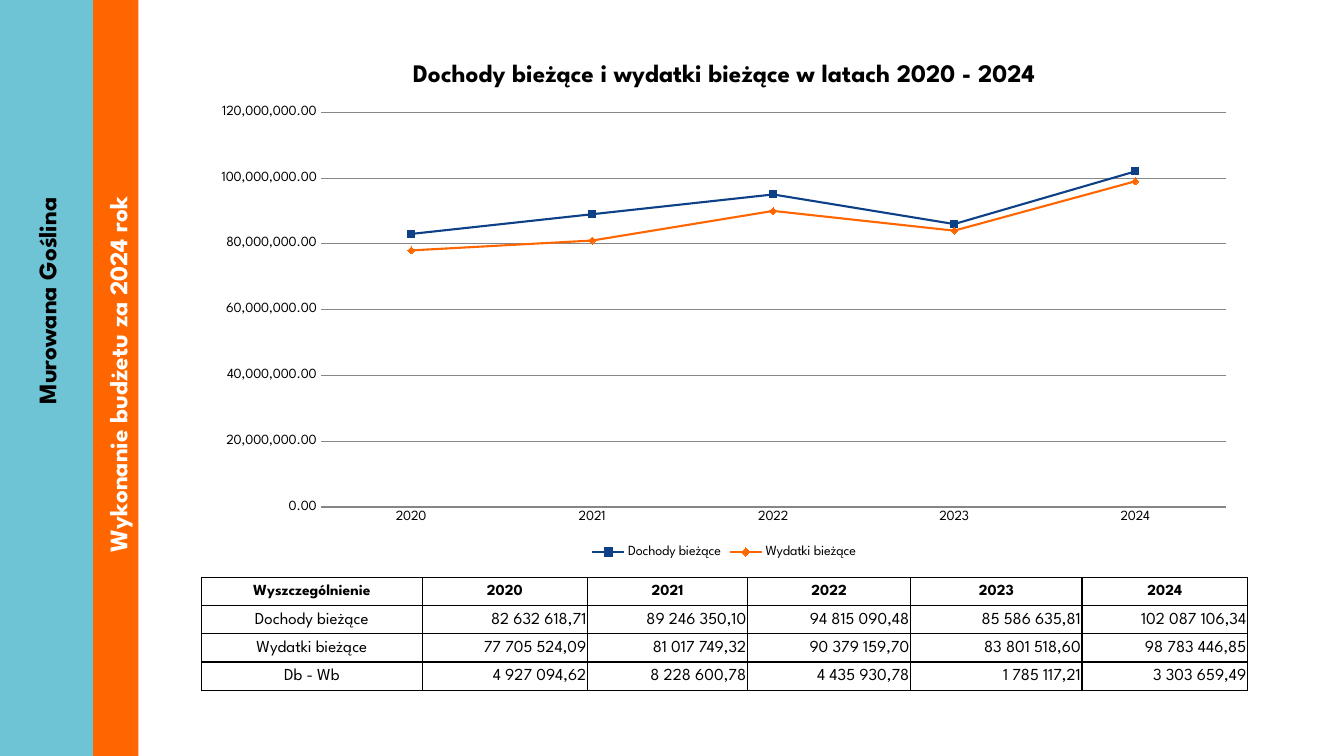
from lxml import etree
from pptx import Presentation
from pptx import util as u
from pptx.chart.data import CategoryChartData
from pptx.dml.color import RGBColor
from pptx.enum import chart as charts, shapes, text
from pptx.oxml import parse_xml
from pptx.oxml.ns import nsdecls, qn

BLACK = RGBColor(0x00, 0x00, 0x00)
WHITE = RGBColor(0xFF, 0xFF, 0xFF)
TEAL = RGBColor(0x6E, 0xC4, 0xD5)
ORANGE = RGBColor(0xFF, 0x66, 0x00)
NAVY = RGBColor(0x0E, 0x40, 0x87)
GREY = RGBColor(0x86, 0x86, 0x86)

YEARS = ["2020", "2021", "2022", "2023", "2024"]
BUDGET = [
    ["Dochody bieżące", "82 632 618,71", "89 246 350,10", "94 815 090,48",
     "85 586 635,81", "102 087 106,34"],
    ["Wydatki bieżące", "77 705 524,09", "81 017 749,32", "90 379 159,70",
     "83 801 518,60", "98 783 446,85"],
    ["Db - Wb", "4 927 094,62", "8 228 600,78", "4 435 930,78",
     "1 785 117,21", "3 303 659,49"],
]


def amount(label):
    """Turn a Polish-formatted amount into a number in whole millions."""
    return round(float(label.replace(" ", "").replace(",", ".")), -6)


class BudgetSlide:
    font_name = "League Spartan"

    def __init__(self, slide):
        self.slide = slide

    def style(self, font, size, color=BLACK, bold=False):
        font.name = self.font_name
        font.size = u.Pt(size)
        font.bold = bold
        font.color.rgb = color

    def band(self, left, width, color):
        shape = self.slide.shapes.add_shape(
            shapes.MSO_SHAPE.RECTANGLE, u.Cm(left), 0, u.Cm(width), u.Cm(19.05))
        shape.shadow.inherit = False
        shape.fill.solid()
        shape.fill.fore_color.rgb = color
        shape.line.fill.background()

    def vertical_text(self, content, center_x, center_y, length, color):
        thickness = 1.02
        shape = self.slide.shapes.add_textbox(
            u.Cm(center_x - length / 2), u.Cm(center_y - thickness / 2),
            u.Cm(length), u.Cm(thickness))
        shape.rotation = 270
        frame = shape.text_frame
        frame.word_wrap = True
        frame.vertical_anchor = text.MSO_ANCHOR.MIDDLE
        frame.text = content
        self.style(frame.paragraphs[0].runs[0].font, 18, color, True)

    def line_chart(self, title, categories, series, box, plot_box):
        data = CategoryChartData(number_format="#,##0.00")
        data.categories = categories
        for name, values, _, _ in series:
            data.add_series(name, values)
        chart = self.slide.shapes.add_chart(
            charts.XL_CHART_TYPE.LINE_MARKERS, *map(u.Cm, box), data).chart
        self.style(chart.font, 10)

        # Title and legend
        chart.has_title = True
        frame = chart.chart_title.text_frame
        frame.text = title
        self.style(frame.paragraphs[0].runs[0].font, 18, bold=True)
        chart.has_legend = True
        chart.legend.position = charts.XL_LEGEND_POSITION.BOTTOM
        chart.legend.include_in_layout = False
        self.style(chart.legend.font, 10)

        # Axes
        for axis in (chart.category_axis, chart.value_axis):
            axis.major_tick_mark = axis.minor_tick_mark = charts.XL_TICK_MARK.NONE
            self.style(axis.tick_labels.font, 10)
        chart.category_axis.format.line.color.rgb = GREY
        value_axis = chart.value_axis
        value_axis.minimum_scale, value_axis.maximum_scale = 0, 120_000_000
        value_axis.major_unit = 20_000_000
        value_axis.format.line.fill.background()
        value_axis.major_gridlines.format.line.color.rgb = GREY
        value_axis.tick_labels.number_format = "#,##0.00"
        value_axis.tick_labels.number_format_is_linked = False

        # Lines and markers
        plot = chart.plots[0]
        plot.vary_by_categories = False
        for line, (_, _, color, marker) in zip(plot.series, series):
            line.smooth = False
            line.format.line.color.rgb = color
            line.format.line.width = u.Pt(1.5)
            line.marker.style = marker
            line.marker.size = 5
            line.marker.format.fill.solid()
            line.marker.format.fill.fore_color.rgb = color
            line.marker.format.line.color.rgb = color
        self.place_plot(chart, box, plot_box)

    def place_plot(self, chart, box, plot_box):
        """Fix the inner plot area, given in Cm from the chart's corner."""
        area = chart.plots[0]._element.getparent()
        for old in area.findall(qn("c:layout")):
            area.remove(old)
        parts = '<c:layoutTarget val="inner"/><c:xMode val="edge"/><c:yMode val="edge"/>'
        for key, length, whole in zip("xywh", plot_box, box[2:] * 2):
            parts += f'<c:{key} val="{length / whole:.4f}"/>'
        area.insert(0, parse_xml(
            f'<c:layout {nsdecls("c")}><c:manualLayout>{parts}</c:manualLayout></c:layout>'))

    def cell_borders(self, cell):
        properties = cell._tc.get_or_add_tcPr()
        for side in ("a:lnL", "a:lnR", "a:lnT", "a:lnB"):
            line = etree.SubElement(properties, qn(side), w=str(u.Pt(1)))
            fill = etree.SubElement(line, qn("a:solidFill"))
            etree.SubElement(fill, qn("a:srgbClr"), val=str(BLACK))

    def table(self, rows, left, top, widths, row_height):
        table = self.slide.shapes.add_table(
            len(rows), len(widths), u.Cm(left), u.Cm(top),
            u.Cm(sum(widths)), u.Cm(row_height * len(rows))).table
        table.first_row = table.horz_banding = False
        for column, width in zip(table.columns, widths):
            column.width = u.Cm(width)
        for row_index, row in enumerate(rows):
            table.rows[row_index].height = u.Cm(row_height)
            is_header = row_index == 0
            for column_index, content in enumerate(row):
                cell = table.cell(row_index, column_index)
                cell.margin_left = cell.margin_right = cell.margin_top = u.Cm(0.03)
                cell.margin_bottom = 0
                cell.vertical_anchor = text.MSO_ANCHOR.MIDDLE
                self.cell_borders(cell)
                cell.fill.background()
                cell.text_frame.text = content
                paragraph = cell.text_frame.paragraphs[0]
                centered = is_header or column_index == 0
                paragraph.alignment = (
                    text.PP_ALIGN.CENTER if centered else text.PP_ALIGN.RIGHT)
                self.style(paragraph.runs[0].font, 11 if is_header else 12, bold=is_header)


def main():
    presentation = Presentation()
    presentation.slide_width = u.Cm(33.87)
    presentation.slide_height = u.Cm(19.05)
    page = BudgetSlide(presentation.slides.add_slide(presentation.slide_layouts[6]))

    # Side bands with vertical titles
    page.band(0, 2.35, TEAL)
    page.vertical_text("Murowana Goślina", 1.17, 7.24, 6.4, BLACK)
    page.band(2.35, 1.14, ORANGE)
    page.vertical_text("Wykonanie budżetu za 2024 rok", 2.96, 7.29, 13.74, WHITE)

    # Income and spending chart, drawn from the first two table rows
    looks = [(NAVY, charts.XL_MARKER_STYLE.SQUARE), (ORANGE, charts.XL_MARKER_STYLE.DIAMOND)]
    series = [(name, [amount(label) for label in labels], *look)
              for (name, *labels), look in zip(BUDGET, looks)]
    page.line_chart("Dochody bieżące i wydatki bieżące w latach 2020 - 2024",
                    YEARS, series, (5.08, 1.04, 26.34, 13.13), (3, 1.79, 22.81, 9.95))

    # Table of amounts
    page.table([["Wyszczególnienie", *YEARS], *BUDGET], 5.08, 14.55,
               [5.56, 4.17, 4.03, 4.11, 4.32, 4.17], 0.71)

    presentation.save("out.pptx")


if __name__ == "__main__":
    main()
